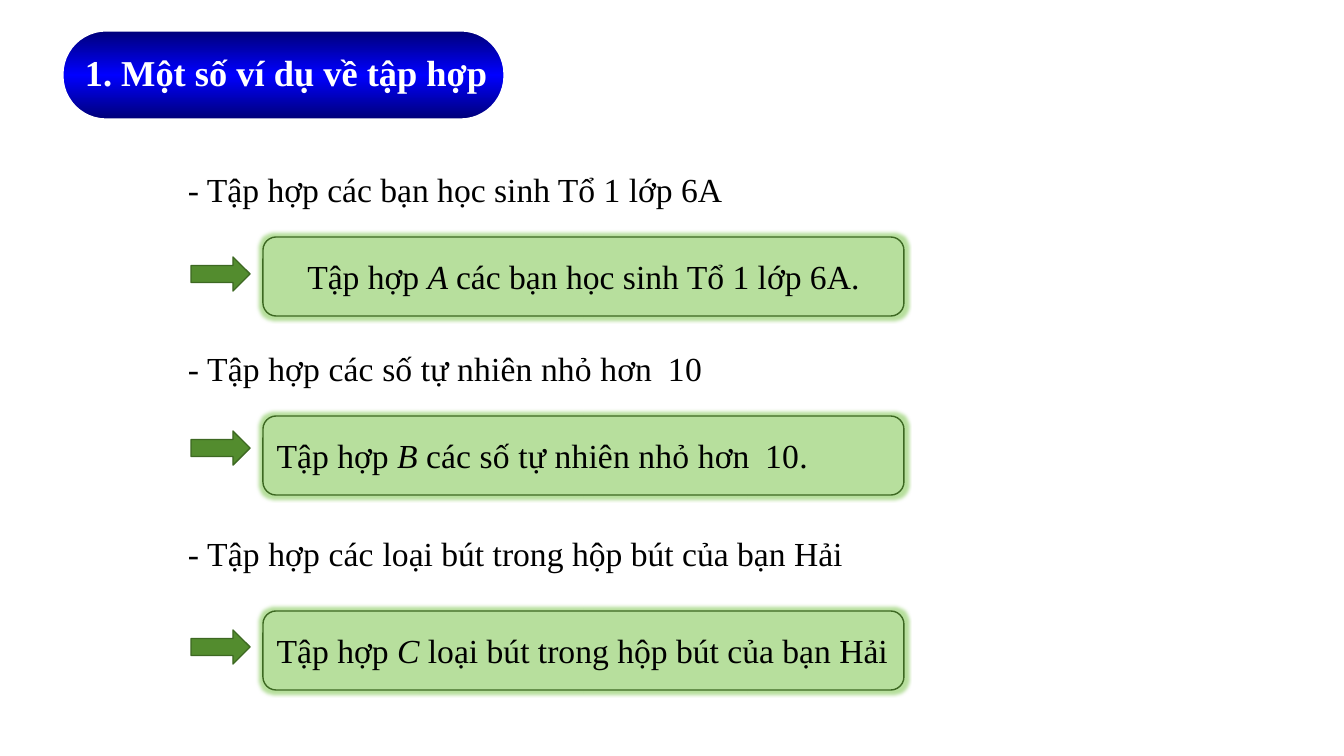
from copy import deepcopy
from dataclasses import dataclass

from lxml import etree
from pptx import Presentation
from pptx.dml.color import RGBColor
from pptx.enum.shapes import MSO_SHAPE
from pptx.enum.text import MSO_ANCHOR, PP_ALIGN
from pptx.oxml.ns import qn
from pptx.util import Pt

PILL = MSO_SHAPE.ROUNDED_RECTANGLE
ARROW = MSO_SHAPE.RIGHT_ARROW
ANSWER_BOX = MSO_SHAPE.FLOWCHART_ALTERNATE_PROCESS
MIDDLE = MSO_ANCHOR.MIDDLE
LEFT, CENTER = PP_ALIGN.LEFT, PP_ALIGN.CENTER
EMU_PER_PX = 914400 / 100.8


@dataclass(frozen=True)
class Theme:
    font: str = "Times New Roman"
    title_size: int = 26
    body_size: int = 24
    white: str = "FFFFFF"
    black: str = "000000"
    navy: str = "000076"
    blue: str = "0000FF"
    arrow: str = "538C2E"
    outline: str = "3D6822"
    answer: str = "B7DF9D"


theme = Theme()


def px(*lengths):
    return [round(length * EMU_PER_PX) for length in lengths]


def write_runs(paragraph, pieces, size, color):
    for text, italic, spacing in pieces:
        run = paragraph.add_run()
        run.text = text
        run.font.name = theme.font
        run.font.size = Pt(size)
        run.font.italic = italic
        run.font.color.rgb = RGBColor.from_string(color)
        if spacing:
            run.font._element.set("spc", str(spacing))


presentation = Presentation()
presentation.slide_width, presentation.slide_height = px(1344, 756)
slide = presentation.slides.add_slide(presentation.slide_layouts[6])

title = slide.shapes.add_shape(PILL, *px(62, 30, 443, 90))
title.adjustments[0] = 0.49
title.shadow.inherit = False
title.fill.gradient()
stop_list = title._element.spPr.find(qn("a:gradFill")).find(qn("a:gsLst"))
stop_list.append(deepcopy(stop_list[0]))
stop_colors = [theme.navy, theme.blue, theme.navy]
for index, stop in enumerate(title.fill.gradient_stops):
    stop.position = index / 2
    stop.color.rgb = RGBColor.from_string(stop_colors[index])
title.fill.gradient_angle = 90
title.line.color.rgb = RGBColor.from_string(theme.white)
title.line.width = Pt(2.25)
title.text_frame.word_wrap = False
title.text_frame.vertical_anchor = MIDDLE
heading = title.text_frame.paragraphs[0]
heading.alignment = LEFT
heading.line_spacing = 0.9
write_runs(heading, [("1. Một số ví dụ về tập hợp", False, 0)], theme.title_size, theme.white)
heading.runs[0].font.bold = True

examples = [
    (164, 257, 237, CENTER,
     [("- Tập hợp các bạn học sinh Tổ 1 lớp 6A", False, 0)],
     [("Tập hợp ", False, 0), ("A ", True, 0), ("các bạn học sinh Tổ 1 lớp 6A.", False, 0)]),
    (343, 431, 416, LEFT,
     [("- Tập hợp các số tự nhiên nhỏ hơn", False, 12), (" ", False, 450), ("10", False, 30)],
     [("Tập hợp ", False, 0), ("B ", True, 0), ("các số tự nhiên nhỏ hơn", False, 12),
      (" ", False, 450), ("10.", False, 30)]),
    (528, 630, 611, LEFT,
     [("- Tập hợp các ", False, 12), ("loại bút trong hộp bút của bạn Hải", False, 0)],
     [("Tập hợp ", False, 0), ("C ", True, 0), ("loại bút trong hộp bút của bạn Hải", False, 0)]),
]

for text_top, arrow_top, answer_top, alignment, example, answer in examples:
    textbox = slide.shapes.add_textbox(*px(178, text_top, 677, 50))
    textbox.text_frame.word_wrap = True
    write_runs(textbox.text_frame.paragraphs[0], example, theme.body_size, theme.black)

    arrow = slide.shapes.add_shape(ARROW, *px(191, arrow_top, 59, 34))
    answer_box = slide.shapes.add_shape(ANSWER_BOX, *px(263, answer_top, 641, 79))
    for shape, fill_color in ((arrow, theme.arrow), (answer_box, theme.answer)):
        shape.shadow.inherit = False
        shape.fill.solid()
        shape.fill.fore_color.rgb = RGBColor.from_string(fill_color)
        shape.line.color.rgb = RGBColor.from_string(theme.outline)
        shape.line.width = Pt(1)

    effects = answer_box._element.spPr.find(qn("a:effectLst"))
    glow = etree.SubElement(effects, qn("a:glow"), rad=str(Pt(5)))
    etree.SubElement(glow, qn("a:srgbClr"), val=theme.answer)
    answer_box.text_frame.word_wrap = True
    answer_box.text_frame.vertical_anchor = MIDDLE
    paragraph = answer_box.text_frame.paragraphs[0]
    paragraph.alignment = alignment
    write_runs(paragraph, answer, theme.body_size, theme.black)

presentation.save("out.pptx")
